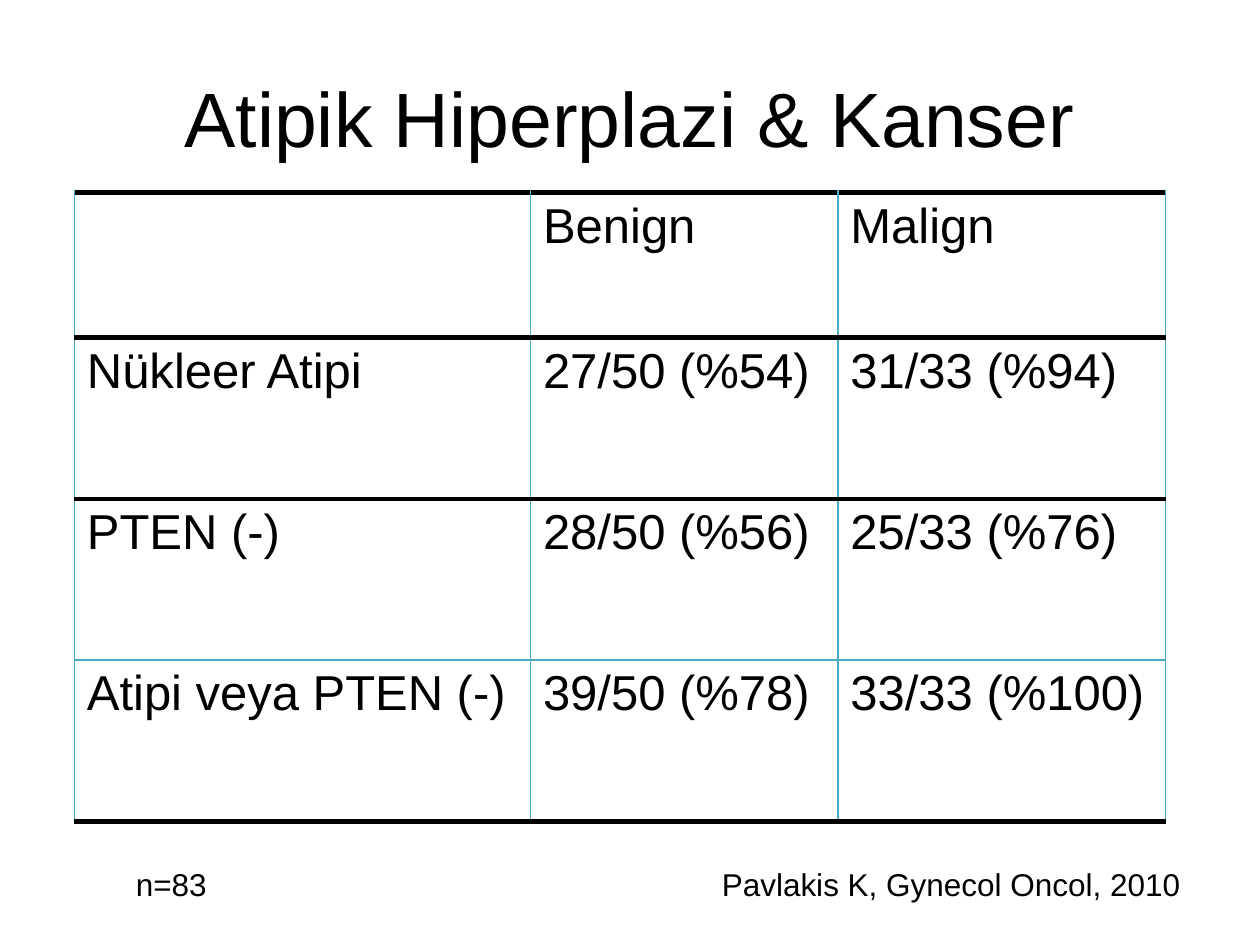
from dataclasses import dataclass
from typing import NamedTuple

from lxml import etree
from pptx import Presentation
from pptx import util as u
from pptx.dml.color import RGBColor
from pptx.enum import text
from pptx.oxml.ns import qn

SCALE = 9144


def px(n: int) -> u.Emu:
    return u.Emu(n * SCALE)


@dataclass(frozen=True)
class Theme:
    font: str = "Arial"
    ink: str = "000000"
    rule: str = "4BACC6"
    title: int = 44
    body: int = 28
    note: int = 18


class Box(NamedTuple):
    left: int
    top: int
    width: int
    height: int


class Line(NamedTuple):
    color: str
    width: int


class Note(NamedTuple):
    words: str
    box: Box


T = Theme()
HEAVY, LIGHT = Line(T.ink, 3), Line(T.rule, 1)
TITLE = Note("Atipik Hiperplazi & Kanser", Box(50, 30, 900, 125))
NOTES = [
    Note("Pavlakis K, Gynecol Oncol, 2010", Box(563, 682, 388, 40)),
    Note("n=83", Box(98, 682, 77, 40)),
]
TABLE = Box(59, 153, 866, 499)
COLS = [362, 244, 260]
ROWS = [115, 128, 128, 128]
ROW_LINES = [HEAVY, HEAVY, HEAVY, LIGHT, HEAVY]
DATA = [
    ["", "Benign", "Malign"],
    ["Nükleer Atipi", "27/50 (%54)", "31/33 (%94)"],
    ["PTEN (-)", "28/50 (%56)", "25/33 (%76)"],
    ["Atipi veya PTEN (-)", "39/50 (%78)", "33/33 (%100)"],
]


def place(sp, box: Box) -> None:
    for name, value in box._asdict().items():
        setattr(sp, name, px(value))


def write(tf, words: str, size: int, align=text.PP_ALIGN.LEFT) -> None:
    p = tf.paragraphs[0]
    p.alignment = align
    fonts = [p.font]
    if words:
        r = p.add_run()
        r.text = words
        fonts = [r.font]
    for font in fonts:
        for name, value in {"size": u.Pt(size), "name": T.font}.items():
            setattr(font, name, value)
        font.color.rgb = RGBColor.from_string(T.ink)


def add_border(cell, side: str, line: Line) -> None:
    pr = cell._tc.get_or_add_tcPr()
    ln = etree.SubElement(pr, qn(f"a:ln{side}"), w=str(u.Pt(line.width)))
    fill = etree.SubElement(ln, qn("a:solidFill"))
    etree.SubElement(fill, qn("a:srgbClr"), val=line.color)


def add_results(s) -> None:
    frame = s.shapes.add_table(len(ROWS), len(COLS), *map(px, TABLE))
    table = frame.table
    for name in ("first_row", "horz_banding"):
        setattr(table, name, False)
    for col, width in zip(table.columns, COLS):
        col.width = px(width)
    for i, height in enumerate(ROWS):
        table.rows[i].height = px(height)
        for j, words in enumerate(DATA[i]):
            cell = table.cell(i, j)
            write(cell.text_frame, words, T.body)
            sides = {"L": LIGHT, "R": LIGHT, "T": ROW_LINES[i], "B": ROW_LINES[i + 1]}
            for side, line in sides.items():
                add_border(cell, side, line)
            cell.fill.background()


def add_note(s, note: Note) -> None:
    tf = s.shapes.add_textbox(*map(px, note.box)).text_frame
    for name, value in {"word_wrap": False, "auto_size": text.MSO_AUTO_SIZE.SHAPE_TO_FIT_TEXT}.items():
        setattr(tf, name, value)
    write(tf, note.words, T.note)


def main() -> None:
    prs = Presentation()
    prs.slide_width, prs.slide_height = px(1000), px(750)
    s = prs.slides.add_slide(prs.slide_layouts[5])
    sp = s.shapes.title
    place(sp, TITLE.box)
    sp.text_frame.vertical_anchor = text.MSO_ANCHOR.MIDDLE
    write(sp.text_frame, TITLE.words, T.title, text.PP_ALIGN.CENTER)
    add_results(s)
    for note in NOTES:
        add_note(s, note)
    prs.save("out.pptx")


if __name__ == "__main__":
    main()
